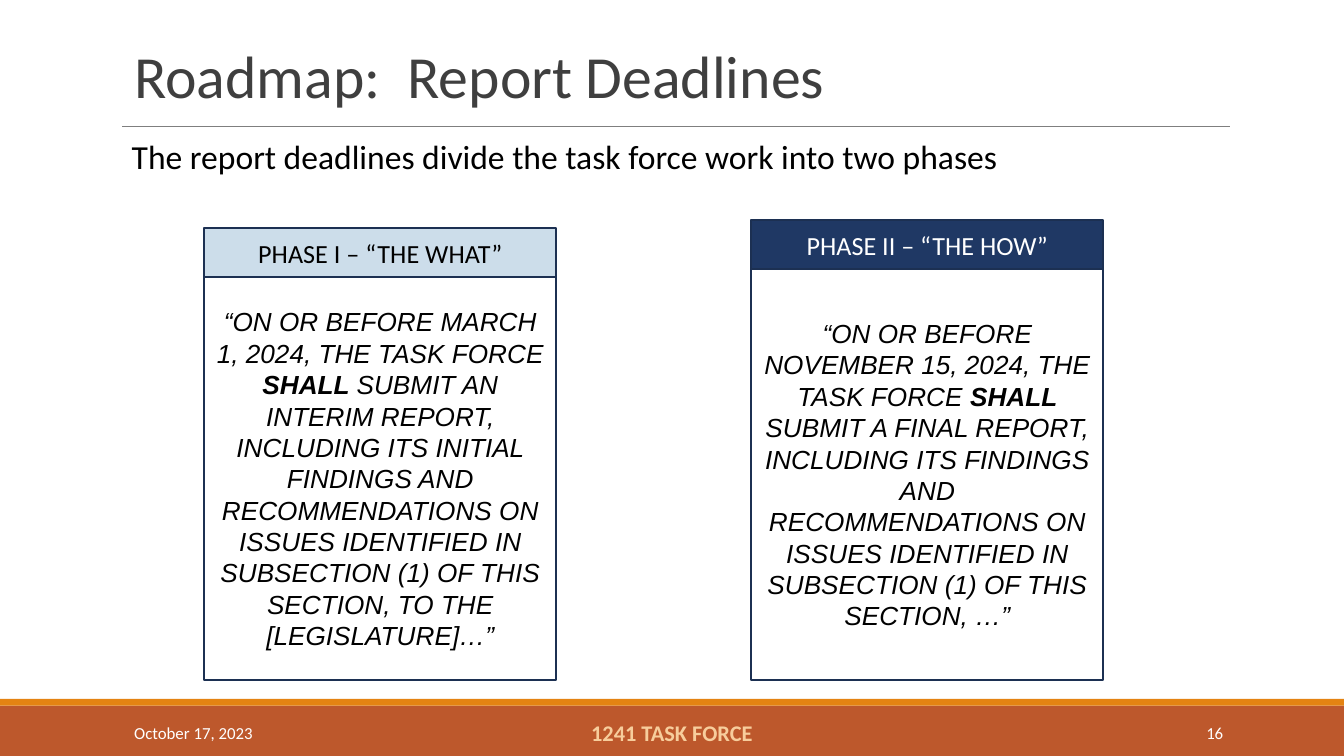
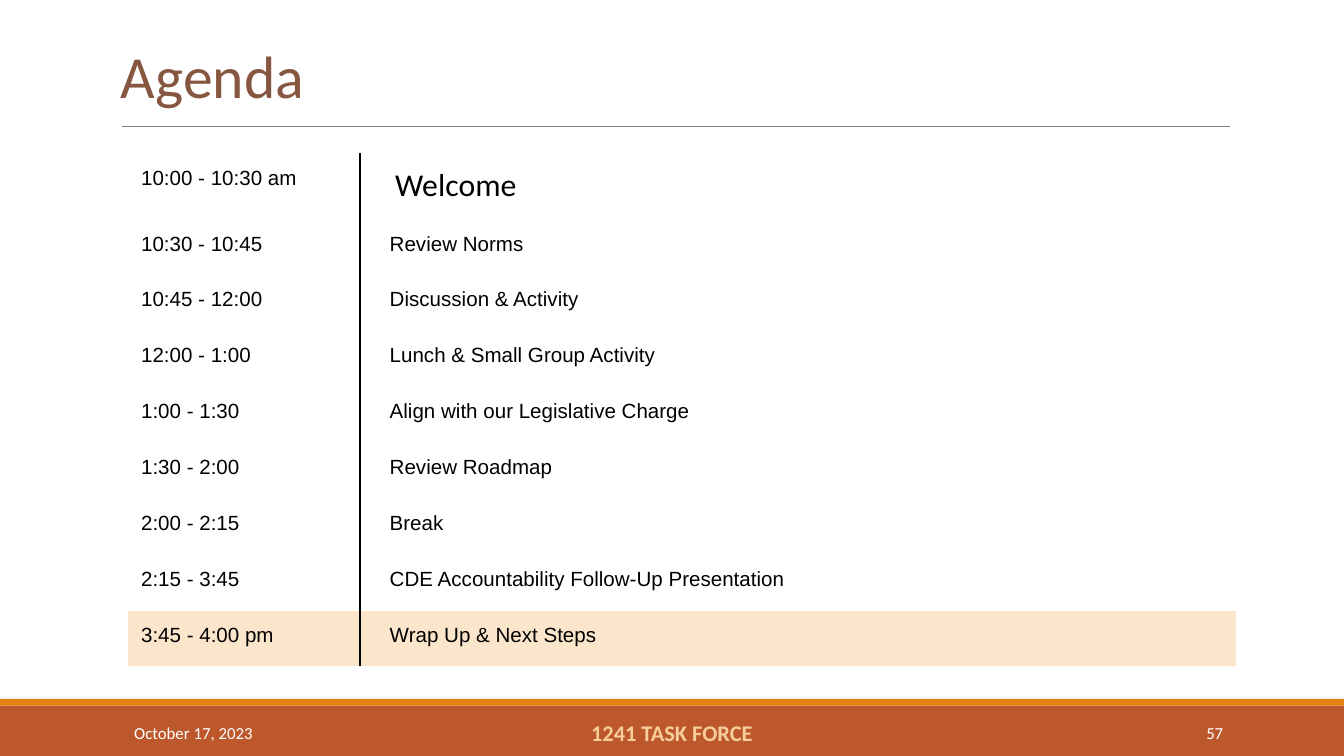
from lxml import etree
from pptx import Presentation
from pptx.dml.color import RGBColor
from pptx.enum.shapes import MSO_CONNECTOR, MSO_SHAPE
from pptx.enum.text import MSO_ANCHOR, PP_ALIGN
from pptx.oxml.ns import qn
from pptx.util import Inches, Pt

LEFT, CENTER, RIGHT = PP_ALIGN.LEFT, PP_ALIGN.CENTER, PP_ALIGN.RIGHT
TOP, MIDDLE, BOTTOM = MSO_ANCHOR.TOP, MSO_ANCHOR.MIDDLE, MSO_ANCHOR.BOTTOM
RECTANGLE = MSO_SHAPE.RECTANGLE
STRAIGHT = MSO_CONNECTOR.STRAIGHT

COLORS = {
    "white": "FFFFFF",
    "black": "000000",
    "band": "BD582C",
    "stripe": "E48312",
    "rule": "7F7F7F",
    "title": "3F3F3F",
    "agenda_title": "865640",
    "footer": "F7CD9C",
    "card_line": "1C3052",
    "phase_one": "CCDDEA",
    "phase_two": "1F3864",
    "highlight": "FBE6CC",
}
HEADING_FONT = "Calibri"
BODY_FONT = "Arial"
WIDE_INSETS = (0.1, 0.05)
CARD_INSETS = (0.08, 0.04)
CARD_WIDTH = 2.62
CARD_BOTTOM = 5.06
CARD_HEADER_HEIGHT = 0.36

PHASES = [
    {
        "left": 1.52,
        "top": 1.7,
        "heading": "PHASE I – “THE WHAT”",
        "fill": "phase_one",
        "color": "black",
        "spans": [
            ("“ON OR BEFORE MARCH 1, 2024, THE TASK FORCE ", False),
            ("SHALL ", True),
            ("SUBMIT AN INTERIM REPORT, INCLUDING ITS INITIAL FINDINGS AND "
             "RECOMMENDATIONS ON ISSUES IDENTIFIED IN SUBSECTION (1) OF THIS "
             "SECTION, TO THE [LEGISLATURE]…”", False),
        ],
    },
    {
        "left": 5.59,
        "top": 1.64,
        "heading": "PHASE II – “THE HOW”",
        "fill": "phase_two",
        "color": "white",
        "spans": [
            ("“ON OR BEFORE NOVEMBER 15, 2024, THE TASK FORCE ", False),
            ("SHALL", True),
            (" SUBMIT A FINAL REPORT, INCLUDING ITS FINDINGS AND "
             "RECOMMENDATIONS ON ISSUES IDENTIFIED IN SUBSECTION (1) OF THIS "
             "SECTION, …”", False),
        ],
    },
]

AGENDA = [
    ("10:00 - 10:30 am", "Welcome"),
    ("10:30 - 10:45", "Review Norms"),
    ("10:45 - 12:00", "Discussion & Activity"),
    ("12:00 - 1:00", "Lunch & Small Group Activity"),
    ("1:00 - 1:30", "Align with our Legislative Charge"),
    ("1:30 - 2:00", "Review Roadmap"),
    ("2:00 - 2:15", "Break"),
    ("2:15 - 3:45", "CDE Accountability Follow-Up Presentation"),
    ("3:45 - 4:00 pm", "Wrap Up & Next Steps"),
]


def rgb(name):
    return RGBColor.from_string(COLORS[name])


def style_font(font, size, color, name=HEADING_FONT, bold=False, italic=False):
    font.name = name
    font.size = Pt(size)
    font.color.rgb = rgb(color)
    font.bold = bold
    font.italic = italic


def set_frame(frame, insets, anchor):
    horizontal, vertical = insets
    frame.word_wrap = True
    frame.vertical_anchor = anchor
    frame.margin_left = frame.margin_right = Inches(horizontal)
    frame.margin_top = frame.margin_bottom = Inches(vertical)


def add_text(page, area, text, size, color, insets=WIDE_INSETS, anchor=MIDDLE,
             align=LEFT, bold=False):
    box = page.shapes.add_textbox(*map(Inches, area))
    set_frame(box.text_frame, insets, anchor)
    para = box.text_frame.paragraphs[0]
    para.text = text
    para.alignment = align
    style_font(para.font, size, color, bold=bold)
    return para


def add_box(page, area, fill, line=None):
    box = page.shapes.add_shape(RECTANGLE, *map(Inches, area))
    box.shadow.inherit = False
    box.fill.solid()
    box.fill.fore_color.rgb = rgb(fill)
    if line:
        box.line.color.rgb = rgb(line)
        box.line.width = Pt(1)
    else:
        box.line.fill.background()
    return box


def add_rule(page, left, right, top):
    rule = page.shapes.add_connector(
        STRAIGHT, Inches(left), Inches(top), Inches(right), Inches(top))
    rule.line.color.rgb = rgb("rule")
    rule.line.width = Pt(0.75)
    etree.SubElement(rule.element.spPr, qn("a:effectLst"))


def add_page(deck, number):
    page = deck.slides.add_slide(deck.slide_layouts[6])
    add_box(page, (0, 5.25, 10, 0.38), "band")
    add_box(page, (0, 5.2, 10, 0.05), "stripe")
    add_rule(page, 0.91, 9.15, 0.94)
    add_text(page, (0.9, 5.3, 2.03, 0.3), "October 17, 2023", 9, "white")
    add_text(page, (3.02, 5.3, 3.96, 0.3), "1241 TASK FORCE", 12, "footer",
             align=CENTER, bold=True)
    add_text(page, (8.12, 5.3, 1.08, 0.3), str(number), 9, "white", align=RIGHT)
    return page


def add_title(page, text, color, insets=WIDE_INSETS, anchor=BOTTOM):
    return add_text(page, (0.9, 0.24, 8.25, 0.63), text, 32, color, insets, anchor)


def add_card_part(page, area, fill, spans, color, font=HEADING_FONT, italic=False):
    box = add_box(page, area, fill, "card_line")
    set_frame(box.text_frame, CARD_INSETS, MIDDLE)
    para = box.text_frame.paragraphs[0]
    para.alignment = CENTER
    style_font(para.font, 14, color, font, italic=italic)
    for text, bold in spans:
        span = para.add_run()
        span.text = text
        span.font.bold = bold
        span.font.color.rgb = rgb(color)


def add_phase(page, phase):
    left, top = phase["left"], phase["top"]
    body_top = top + CARD_HEADER_HEIGHT
    add_card_part(page, (left, body_top, CARD_WIDTH, CARD_BOTTOM - body_top),
                  "white", phase["spans"], "black", BODY_FONT, italic=True)
    add_card_part(page, (left, top, CARD_WIDTH, CARD_HEADER_HEIGHT),
                  phase["fill"], [(phase["heading"], False)], phase["color"])


def set_cell_borders(cell, ruled_side):
    properties = cell._tc.get_or_add_tcPr()
    for position, side in enumerate(("lnL", "lnR", "lnT", "lnB")):
        border = etree.Element(qn(f"a:{side}"), w=str(Pt(1)))
        if side == ruled_side:
            fill = etree.SubElement(border, qn("a:solidFill"))
            etree.SubElement(fill, qn("a:srgbClr"), val=COLORS["black"])
        else:
            etree.SubElement(border, qn("a:noFill"))
        properties.insert(position, border)


def fill_cell(cell, text, fill, ruled_side, size, font, indent):
    cell.fill.solid()
    cell.fill.fore_color.rgb = rgb(fill)
    cell.margin_left = Inches(indent)
    cell.margin_right = cell.margin_top = cell.margin_bottom = Inches(0.1)
    cell.vertical_anchor = TOP
    para = cell.text_frame.paragraphs[0]
    para.text = text
    style_font(para.font, size, "black", font)
    set_cell_borders(cell, ruled_side)


def add_agenda(page):
    widths = (1.73, 6.52)
    first_height, other_heights = Inches(0.49), Inches(3.33)
    others = len(AGENDA) - 1
    table = page.shapes.add_table(
        len(AGENDA), len(widths), Inches(0.95), Inches(1.14),
        Inches(sum(widths)), first_height + other_heights).table
    table.first_row = False
    table.horz_banding = False
    for column, width in zip(table.columns, widths):
        column.width = Inches(width)
    for index, (time, topic) in enumerate(AGENDA):
        table.rows[index].height = other_heights // others if index else first_height
        fill = "highlight" if index == others else "white"
        topic_style = (11, BODY_FONT, 0.22) if index else (17, HEADING_FONT, 0.26)
        fill_cell(table.cell(index, 0), time, fill, "lnR", 11, BODY_FONT, 0.1)
        fill_cell(table.cell(index, 1), topic, fill, "lnL", *topic_style)


def add_roadmap_page(deck):
    page = add_page(deck, 16)
    title = add_title(page, "Roadmap:  Report Deadlines", "title")
    title.line_spacing = 0.85
    add_text(page, (0.9, 0.97, 8.52, 0.38),
             "The report deadlines divide the task force work into two phases",
             18, "black", CARD_INSETS, TOP)
    for phase in PHASES:
        add_phase(page, phase)


def add_agenda_page(deck):
    page = add_page(deck, 57)
    add_title(page, "Agenda", "agenda_title", (0, 0), MIDDLE)
    add_agenda(page)


def main():
    deck = Presentation()
    deck.slide_width = Inches(10)
    deck.slide_height = Inches(10) * 9 // 16
    add_roadmap_page(deck)
    add_agenda_page(deck)
    deck.save("out.pptx")


if __name__ == "__main__":
    main()
